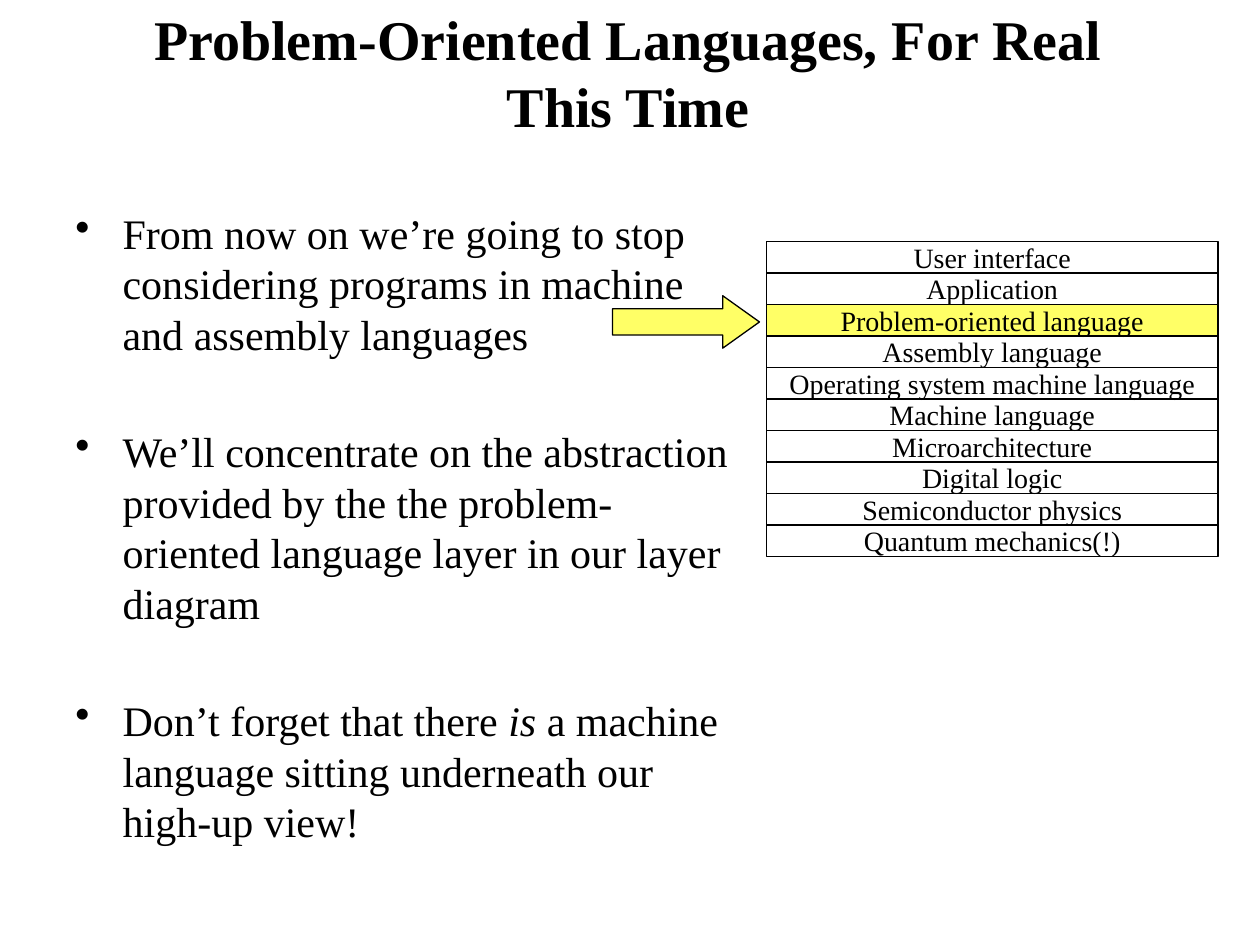
from typing import NamedTuple

from lxml.etree import SubElement
from pptx import Presentation
from pptx.dml.color import RGBColor
from pptx.enum.shapes import MSO_SHAPE
from pptx.enum.text import MSO_ANCHOR, PP_ALIGN
from pptx.oxml.ns import qn
from pptx.util import Pt

FONT = "Times New Roman"
COLORS = {"ink": "000000", "highlight": "FFFF66"}
HANGING_INDENT = Pt(27)
LAYER_HEIGHT = 18


class Box(NamedTuple):
    left: float
    top: float
    width: float
    height: float


class Layer(NamedTuple):
    name: str
    fill: str | None = None


LAYERS = [
    Layer("User interface"),
    Layer("Application"),
    Layer("Problem-oriented language", "highlight"),
    Layer("Assembly language"),
    Layer("Operating system machine language"),
    Layer("Machine language"),
    Layer("Microarchitecture"),
    Layer("Digital logic"),
    Layer("Semiconductor physics"),
    Layer("Quantum mechanics(!)"),
]

POINTS = [
    ["From now on we’re going to stop considering programs in machine and assembly languages"],
    ["We’ll concentrate on the abstraction provided by the the problem-oriented language layer in our layer diagram"],
    ["Don’t forget that there ", "is", " a machine language sitting underneath our high-up view!"],
]


def write(paragraph, text: str, *, size: float, bold: bool = False, italic: bool = False) -> None:
    """Add a formatted run to a paragraph."""
    run = paragraph.add_run()
    run.text = text
    run.font.name = FONT
    run.font.size = Pt(size)
    run.font.bold = bold
    run.font.italic = italic
    run.font.color.rgb = RGBColor.from_string(COLORS["ink"])


def add_text_box(slide, box: Box, anchor: MSO_ANCHOR):
    """Add a wrapping text box and return its text frame."""
    frame = slide.shapes.add_textbox(*map(Pt, box)).text_frame
    frame.word_wrap = True
    frame.vertical_anchor = anchor
    return frame


def add_outlined_shape(slide, kind: MSO_SHAPE, box: Box, fill: str | None = None):
    """Add a thinly outlined shape with an optional fill."""
    shape = slide.shapes.add_shape(kind, *map(Pt, box))
    shape.shadow.inherit = False
    shape.line.color.rgb = RGBColor.from_string(COLORS["ink"])
    shape.line.width = Pt(0.75)
    if fill:
        shape.fill.solid()
        shape.fill.fore_color.rgb = RGBColor.from_string(COLORS[fill])
    else:
        shape.fill.background()
    return shape


def add_title(slide) -> None:
    """Add the centred slide title."""
    frame = add_text_box(slide, Box(53, 4.5, 612, 72.5), MSO_ANCHOR.MIDDLE)
    paragraph = frame.paragraphs[0]
    paragraph.alignment = PP_ALIGN.CENTER
    write(paragraph, "Problem-Oriented Languages, For Real This Time", size=32, bold=True)


def add_points(slide) -> None:
    """Add the bulleted points, with the odd runs in italics."""
    frame = add_text_box(slide, Box(36, 115, 396, 390), MSO_ANCHOR.TOP)
    for index, runs in enumerate(POINTS):
        paragraph = frame.add_paragraph() if index else frame.paragraphs[0]
        paragraph.space_before = Pt(38.4 if index else 4.8)
        properties = paragraph._p.get_or_add_pPr()
        properties.set("marL", str(HANGING_INDENT))
        properties.set("indent", str(-HANGING_INDENT))
        SubElement(properties, qn("a:buChar")).set("char", "•")
        for position, text in enumerate(runs):
            write(paragraph, text, size=24, italic=position % 2 == 1)


def add_layer(slide, layer: Layer, top: float) -> None:
    """Add one layer of the abstraction stack."""
    box = Box(438, top, 258, LAYER_HEIGHT)
    shape = add_outlined_shape(slide, MSO_SHAPE.RECTANGLE, box, layer.fill)
    frame = shape.text_frame
    frame.word_wrap = False
    frame.vertical_anchor = MSO_ANCHOR.MIDDLE
    paragraph = frame.paragraphs[0]
    paragraph.alignment = PP_ALIGN.CENTER
    write(paragraph, layer.name, size=16)


def main() -> None:
    """Build the slide and save it."""
    presentation = Presentation()
    presentation.slide_width = Pt(720)
    presentation.slide_height = Pt(540)
    slide = presentation.slides.add_slide(presentation.slide_layouts[6])
    add_title(slide)
    add_points(slide)
    for index, layer in enumerate(LAYERS):
        add_layer(slide, layer, 138 + index * LAYER_HEIGHT)
    arrow = add_outlined_shape(slide, MSO_SHAPE.RIGHT_ARROW, Box(350, 169, 84, 30), "highlight")
    arrow.adjustments[1] = 0.7
    presentation.save("out.pptx")


if __name__ == "__main__":
    main()
